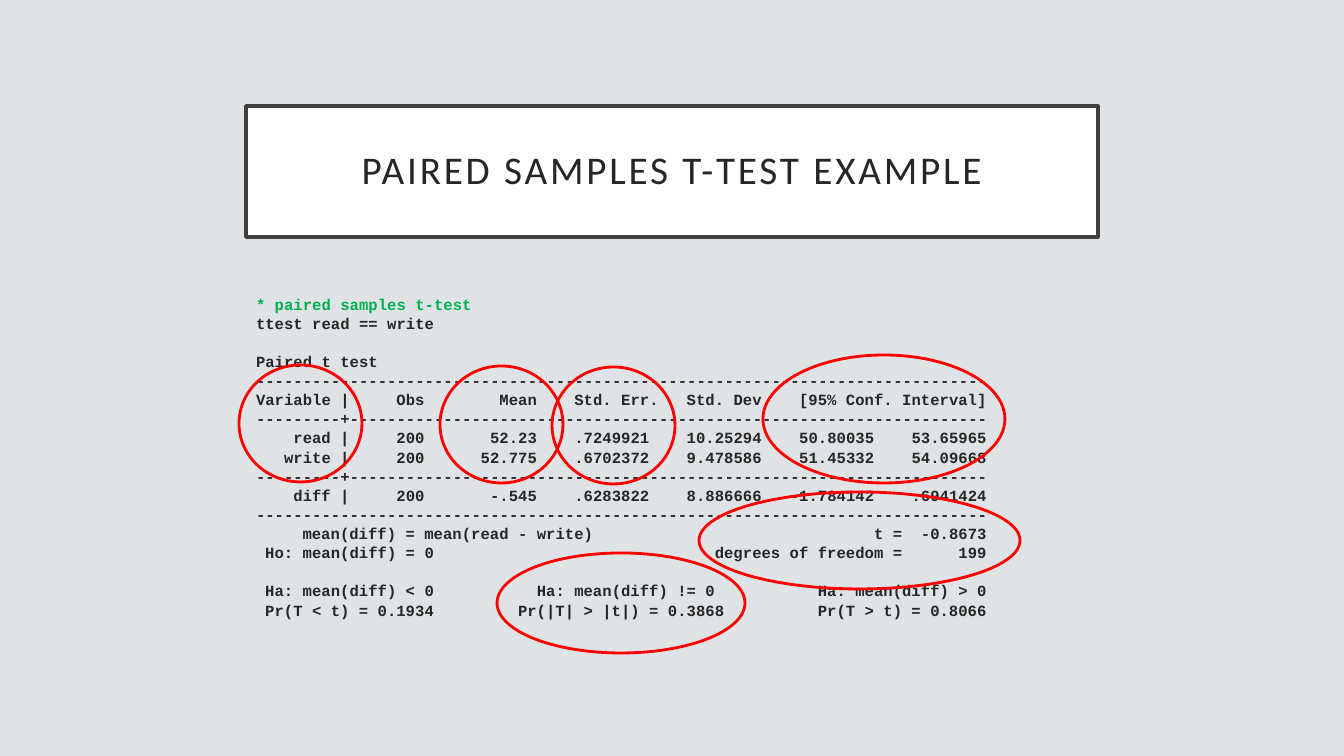
import pptx
import pptx.util
import pptx.dml.color
import pptx.enum.shapes
import pptx.enum.text
import pptx.oxml.ns
import lxml.etree

RGB = pptx.dml.color.RGBColor
Pt = pptx.util.Pt
SHAPES = pptx.enum.shapes.MSO_SHAPE
ALIGN = pptx.enum.text.PP_ALIGN
ANCHOR = pptx.enum.text.MSO_ANCHOR

BACKGROUND = RGB(0xDF, 0xE3, 0xE5)
WHITE = RGB(0xFF, 0xFF, 0xFF)
FRAME = RGB(0x40, 0x40, 0x40)
INK = RGB(0x26, 0x26, 0x26)
GREEN = RGB(0x00, 0xB0, 0x50)
RED = RGB(0xFF, 0x00, 0x00)

# Content: each output line has cells and the character columns where they end
TITLE = "PAIRED SAMPLES T-TEST EXAMPLE"
RULE = "-" * 78
CROSS_RULE = "-" * 9 + "+" + "-" * 68
HEADER_ENDS = (10, 18, 30, 43, 55, 78)
VALUE_ENDS = (10, 18, 30, 42, 54, 66, 78)
OUTPUT = [
    (["* paired samples t-test"], ()),
    (["ttest read == write"], ()),
    (["Paired t test"], ()),
    ([RULE], ()),
    (["Variable |", "Obs", "Mean", "Std. Err.", "Std. Dev.", "[95% Conf. Interval]"], HEADER_ENDS),
    ([CROSS_RULE], ()),
    (["read |", "200", "52.23", ".7249921", "10.25294", "50.80035", "53.65965"], VALUE_ENDS),
    (["write |", "200", "52.775", ".6702372", "9.478586", "51.45332", "54.09668"], VALUE_ENDS),
    ([CROSS_RULE], ()),
    (["diff |", "200", "-.545", ".6283822", "8.886666", "-1.784142", ".6941424"], VALUE_ENDS),
    ([RULE], ()),
    (["mean(diff) = mean(read - write)", "t =", "-0.8673"], (36, 69, 78)),
    (["Ho: mean(diff) = 0", "degrees of freedom =", "199"], (19, 69, 78)),
    (["Ha: mean(diff) < 0", "Ha: mean(diff) != 0", "Ha: mean(diff) > 0"], (19, 49, 78)),
    (["Pr(T < t) = 0.1934", "Pr(|T| > |t|) = 0.3868", "Pr(T > t) = 0.8066"], (19, 50, 78)),
]
SECTION_STARTS = ("Paired t test", "Ha: mean(diff) < 0")

# Left, top, width, height in px
TITLE_AREA = (246, 106, 852, 131)
OUTPUT_AREA = (246, 290, 852, 342)
HIGHLIGHTS = [
    (440, 366, 123, 117),   # mean
    (239, 365, 123, 117),   # variable
    (552, 367, 123, 117),   # standard error
    (763, 355, 242, 128),   # confidence interval
    (497, 553, 248, 100),   # two-sided p-value
    (699, 492, 321, 97),    # t and degrees of freedom
]
LINE_PITCH = Pt(13.65)
CHAR_WIDTH = Pt(6.69)


def px(length):
    return round(length * 914400 / 100.8)


def add_outlined(page, kind, area, color, width, fill=None):
    box = page.shapes.add_shape(kind, *map(px, area))
    box.shadow.inherit = False
    if fill is None:
        box.fill.background()
    else:
        box.fill.solid()
        box.fill.fore_color.rgb = fill
    box.line.color.rgb = color
    box.line.width = Pt(width)
    return box


def write(para, text, *, font, size, color=INK, bold=False, align=ALIGN.LEFT, spacing=1.0, before=0):
    para.alignment = align
    para.line_spacing = spacing
    para.space_before = before
    span = para.add_run()
    span.text = text
    span.font.name = font
    span.font.size = Pt(size)
    span.font.bold = bold
    span.font.color.rgb = color
    return span


def add_right_tabs(para, ends):
    qn = pptx.oxml.ns.qn
    tabs = lxml.etree.SubElement(para._p.get_or_add_pPr(), qn("a:tabLst"))
    for end in ends:
        lxml.etree.SubElement(tabs, qn("a:tab"), pos=str(end * CHAR_WIDTH), algn="r")


def main():
    deck = pptx.Presentation()
    deck.slide_width, deck.slide_height = px(1344), px(756)
    page = deck.slides.add_slide(deck.slide_layouts[6])
    page.background.fill.solid()
    page.background.fill.fore_color.rgb = BACKGROUND

    # Title
    box = add_outlined(page, SHAPES.RECTANGLE, TITLE_AREA, FRAME, 2.5, WHITE)
    box.text_frame.word_wrap = True
    box.text_frame.vertical_anchor = ANCHOR.MIDDLE
    span = write(box.text_frame.paragraphs[0], TITLE, font="Calibri", size=28,
                 align=ALIGN.CENTER, spacing=0.9)
    span.font._element.set("spc", "200")

    # Test output
    box = page.shapes.add_textbox(*map(px, OUTPUT_AREA))
    frame = box.text_frame
    frame.word_wrap = True
    frame.margin_left, frame.margin_top = px(10), px(4)
    for index, (cells, ends) in enumerate(OUTPUT):
        para = frame.paragraphs[0] if index == 0 else frame.add_paragraph()
        lead = "\t" if ends else ""
        write(para, lead + "\t".join(cells), font="Courier New", size=11.1, bold=True,
              color=GREEN if index == 0 else INK, spacing=LINE_PITCH,
              before=LINE_PITCH if cells[0] in SECTION_STARTS else 0)
        if ends:
            add_right_tabs(para, ends)

    # Highlight rings
    for area in HIGHLIGHTS:
        add_outlined(page, SHAPES.OVAL, area, RED, 2)

    deck.save("out.pptx")


if __name__ == "__main__":
    main()
